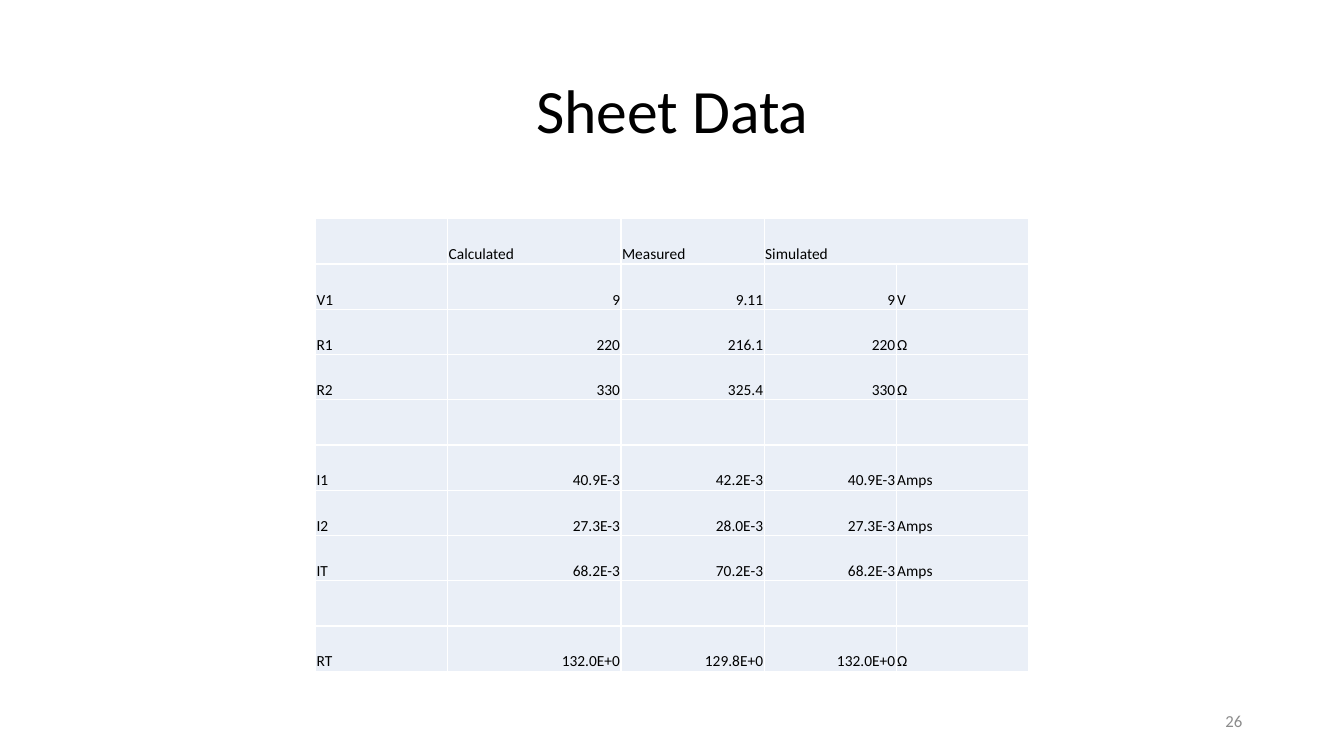
from lxml import etree
from pptx import Presentation, util as u
from pptx.dml.color import RGBColor
from pptx.enum import text
from pptx.oxml import ns

BLACK = RGBColor(0, 0, 0)
GREY = RGBColor(0x8C, 0x8C, 0x8C)
PALE = RGBColor(0xEA, 0xEF, 0xF7)
WHITE = RGBColor(255, 255, 255)
LEFT, MID, RIGHT = text.PP_ALIGN.LEFT, text.PP_ALIGN.CENTER, text.PP_ALIGN.RIGHT

WIDTHS = [1.31, 1.72, 1.42, 1.31, 1.31]
ROWS = [
    ["", "Calculated", "Measured", "Simulated", ""],
    ["V1", "9", "9.11", "9", "V"],
    ["R1", "220", "216.1", "220", "Ω"],
    ["R2", "330", "325.4", "330", "Ω"],
    [""] * 5,
    ["I1", "40.9E-3", "42.2E-3", "40.9E-3", "Amps"],
    ["I2", "27.3E-3", "28.0E-3", "27.3E-3", "Amps"],
    ["IT", "68.2E-3", "70.2E-3", "68.2E-3", "Amps"],
    [""] * 5,
    ["RT", "132.0E+0", "129.8E+0", "132.0E+0", "Ω"],
]


def style(para, words, size, color, align):
    """Write words in a paragraph and set its look."""
    para.text = words
    para.alignment = align
    para.font.name = "Calibri"
    para.font.size = u.Pt(size)
    para.font.color.rgb = color


def label(slide, box, words, size, color, align, space=1.0):
    """Place one line of text, centred in height, in the box."""
    frame = slide.shapes.add_textbox(*map(u.Inches, box)).text_frame
    frame.word_wrap = True
    frame.vertical_anchor = text.MSO_ANCHOR.MIDDLE
    style(frame.paragraphs[0], words, size, color, align)
    frame.paragraphs[0].line_spacing = space


def edge(cell):
    """Draw a thin white line on all four sides of a cell."""
    props = cell._tc.get_or_add_tcPr()
    for i, side in enumerate("LRTB"):
        line = etree.Element(ns.qn(f"a:ln{side}"), w=str(u.Pt(1)))
        fill = etree.SubElement(line, ns.qn("a:solidFill"))
        etree.SubElement(fill, ns.qn("a:srgbClr"), val=str(WHITE))
        props.insert(i, line)


def grid(slide, box):
    """Place the table of values in the box."""
    table = slide.shapes.add_table(
        len(ROWS), len(WIDTHS), *map(u.Inches, box)).table
    table.first_row = table.horz_banding = False
    for col, width in zip(table.columns, WIDTHS):
        col.width = u.Inches(box[2] * width / sum(WIDTHS))
    for r, row in enumerate(ROWS):
        for c, words in enumerate(row):
            cell = table.cell(r, c)
            cell.fill.solid()
            cell.fill.fore_color.rgb = PALE
            cell.vertical_anchor = text.MSO_ANCHOR.BOTTOM
            cell.margin_left = cell.margin_right = cell.margin_top = u.Inches(0.01)
            cell.margin_bottom = 0
            align = RIGHT if r and 0 < c < 4 else LEFT
            style(cell.text_frame.paragraphs[0], words, 11, BLACK, align)
            edge(cell)
    table.cell(0, 3).merge(table.cell(0, 4))


def main():
    """Build the slide and save it."""
    deck = Presentation()
    deck.slide_width, deck.slide_height = u.Inches(13.33), u.Inches(7.5)
    slide = deck.slides.add_slide(deck.slide_layouts[6])
    label(slide, (0.92, 0.4, 11.5, 1.45), "Sheet Data", 44, BLACK, MID, 0.9)
    grid(slide, (3.13, 2.17, 7.07, 4.49))
    label(slide, (9.42, 6.95, 3, 0.4), "26", 12, GREY, RIGHT)
    deck.save("out.pptx")


if __name__ == "__main__":
    main()
